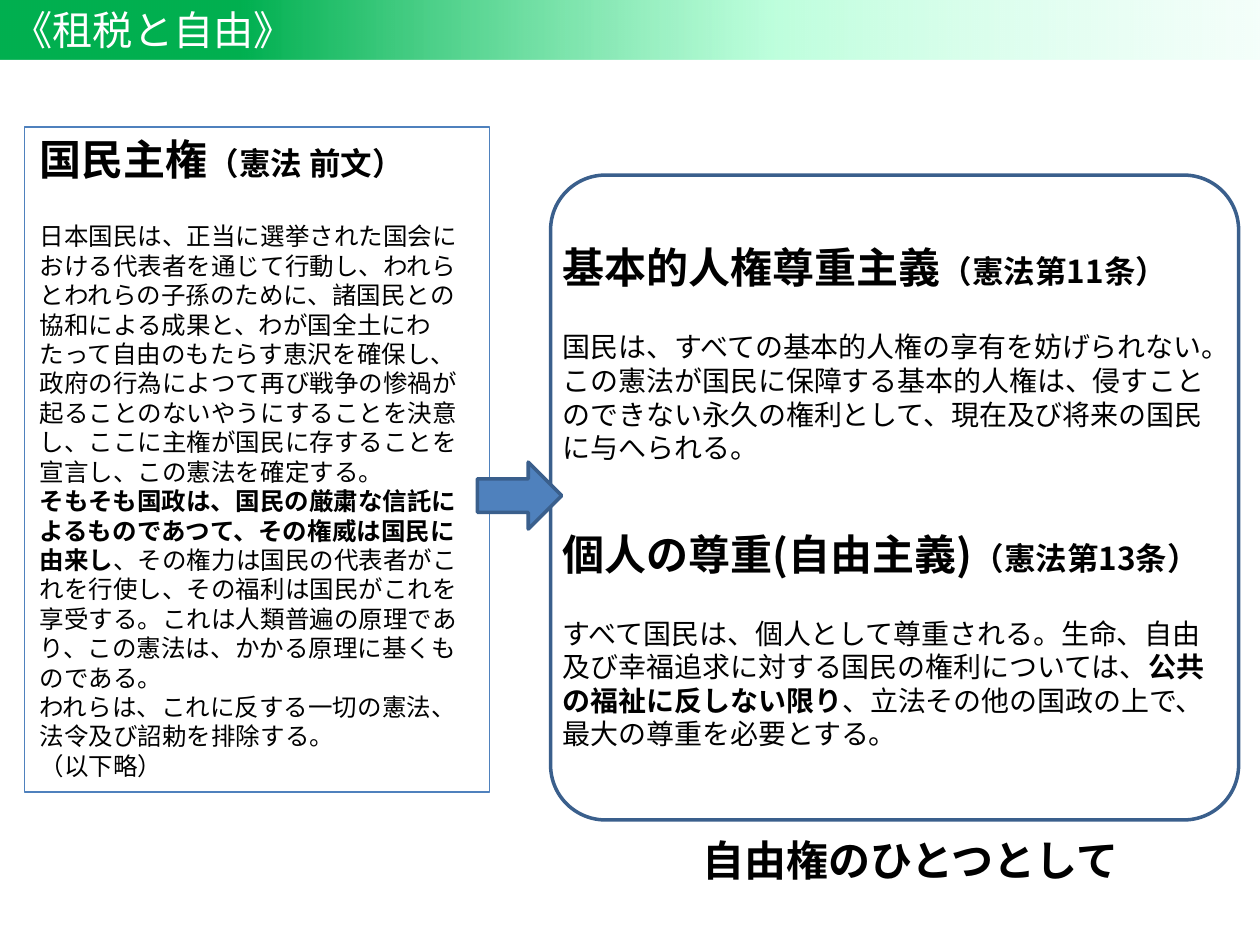
from lxml import etree
from pptx import Presentation
from pptx.dml.color import RGBColor
from pptx.enum.shapes import MSO_SHAPE
from pptx.enum.text import MSO_ANCHOR, PP_ALIGN
from pptx.oxml.ns import qn
from pptx.util import Cm, Pt

RECT = MSO_SHAPE.RECTANGLE
ROUND = MSO_SHAPE.ROUNDED_RECTANGLE
ARROW = MSO_SHAPE.DOWN_ARROW
TOP, MIDDLE = MSO_ANCHOR.TOP, MSO_ANCHOR.MIDDLE
LEFT = PP_ALIGN.LEFT

FONT = "Noto Sans CJK JP"
HEX = {
    "ink": "000000", "white": "FFFFFF",
    "blue": "4F81BD", "navy": "3A5F8C",
    "green": "00B050", "mint": "ABFFD3", "pale": "DBFFF0",
}
GAP = 21.6  # space below a heading, in points


def color(name):
    return RGBColor.from_string(HEX[name])


def add_shape(slide, kind, box, fill=None, line=None, width=2):
    shape = slide.shapes.add_shape(kind, *map(Cm, box))
    shape.shadow.inherit = False
    if fill:
        shape.fill.solid()
        shape.fill.fore_color.rgb = color(fill)
    else:
        shape.fill.background()
    if line:
        shape.line.color.rgb = color(line)
        shape.line.width = Pt(width)
    else:
        shape.line.fill.background()
    return shape


def add_box(slide, box):
    return slide.shapes.add_textbox(*map(Cm, box))


def fade(shape, stops):
    """Fill from left to right; each stop is position, colour, opacity."""
    shape.fill.gradient()
    shape.fill.gradient_angle = 0
    group = shape._element.spPr.find(qn("a:gradFill")).find(qn("a:gsLst"))
    for old in list(group):
        group.remove(old)
    for spot, name, alpha in stops:
        stop = etree.SubElement(group, qn("a:gs"), pos=str(spot * 1000))
        tint = etree.SubElement(stop, qn("a:srgbClr"), val=HEX[name])
        if alpha < 100:
            etree.SubElement(tint, qn("a:alpha"), val=str(alpha * 1000))


def write(shape, paras, size=16, ink="ink", anchor=TOP, wrap=True, inset=0.25):
    """Each paragraph is a list of (text, bold) or (text, bold, size)."""
    frame = shape.text_frame
    frame.word_wrap = wrap
    frame.vertical_anchor = anchor
    frame.margin_left = Cm(inset)
    for i, runs in enumerate(paras):
        para = frame.add_paragraph() if i else frame.paragraphs[0]
        para.alignment = LEFT
        if i == 0 and len(paras) > 1:
            para.space_after = Pt(GAP)
        for text, bold, *own in runs:
            run = para.add_run()
            run.text = text
            font = run.font
            font.name, font.bold = FONT, bold
            font.size = Pt(own[0] if own else size)
            font.color.rgb = color(ink)
            east = etree.SubElement(font._element, qn("a:ea"))
            east.set("typeface", FONT)


def head(text, note):
    return [(text, True, 24), (note, True, 18)]


def main():
    prs = Presentation()
    prs.slide_width, prs.slide_height = Cm(25.4), Cm(19.05)
    slide = prs.slides.add_slide(prs.slide_layouts[6])

    # Frame around the two rights
    frame = add_shape(slide, ROUND, (11.1, 3.53, 13.87, 13), line="navy")
    frame.adjustments[0] = 0.085

    # Popular sovereignty
    people = add_shape(slide, RECT, (0.5, 2.56, 9.37, 13.41),
                       line="blue", width=0.75)
    write(people, [
        head("国民主権", "（憲法 前文）"),
        [("日本国民は、正当に選挙された国会における代表者を通じて行動し、"
          "われらとわれらの子孫のために、諸国民との協和による成果と、"
          "わが国全土にわたって自由のもたらす恵沢を確保し、"
          "政府の行為によつて再び戦争の惨禍が起ることのないやうにすることを決意し、"
          "ここに主権が国民に存することを宣言し、この憲法を確定する。", False)],
        [("そもそも国政は、国民の厳粛な信託によるものであつて、"
          "その権威は国民に由来し", True),
         ("、その権力は国民の代表者がこれを行使し、その福利は国民がこれを享受する。"
          "これは人類普遍の原理であり、この憲法は、かかる原理に基くものである。", False)],
        [("われらは、これに反する一切の憲法、法令及び詔勅を排除する。", False)],
        [("（以下略）", False)],
    ], size=14, inset=0.3)

    # The two rights
    rights = [
        (4.75, [
            head("基本的人権尊重主義", "（憲法第11条）"),
            [("国民は、すべての基本的人権の享有を妨げられない。"
              "この憲法が国民に保障する基本的人権は、侵すことのできない永久の権利として、"
              "現在及び将来の国民に与へられる。", False)],
        ]),
        (10.52, [
            head("個人の尊重(自由主義)", "（憲法第13条）"),
            [("すべて国民は、個人として尊重される。"
              "生命、自由及び幸福追求に対する国民の権利については、", False),
             ("公共の福祉に反しない限り", True),
             ("、立法その他の国政の上で、最大の尊重を必要とする。", False)],
        ]),
    ]
    for top, paras in rights:
        write(add_box(slide, (11.1, top, 13.87, 4.78)), paras)

    # Arrow from sovereignty to rights
    arrow = add_shape(slide, ARROW, (9.8, 9.14, 1.35, 1.7), "blue", "navy")
    arrow.rotation = 270

    # Closing label
    label = add_box(slide, (13.92, 16.69, 9.12, 1.27))
    write(label, [[("自由権のひとつとして", True)]], size=24, wrap=False)

    # Title bar
    bar = add_shape(slide, RECT, (0, 0, 25.4, 1.2))
    fade(bar, [(19, "green", 100), (61, "mint", 78), (100, "pale", 28)])
    write(bar, [[("《租税と自由》", False)]], size=23, ink="white", anchor=MIDDLE)

    prs.save("out.pptx")


if __name__ == "__main__":
    main()
